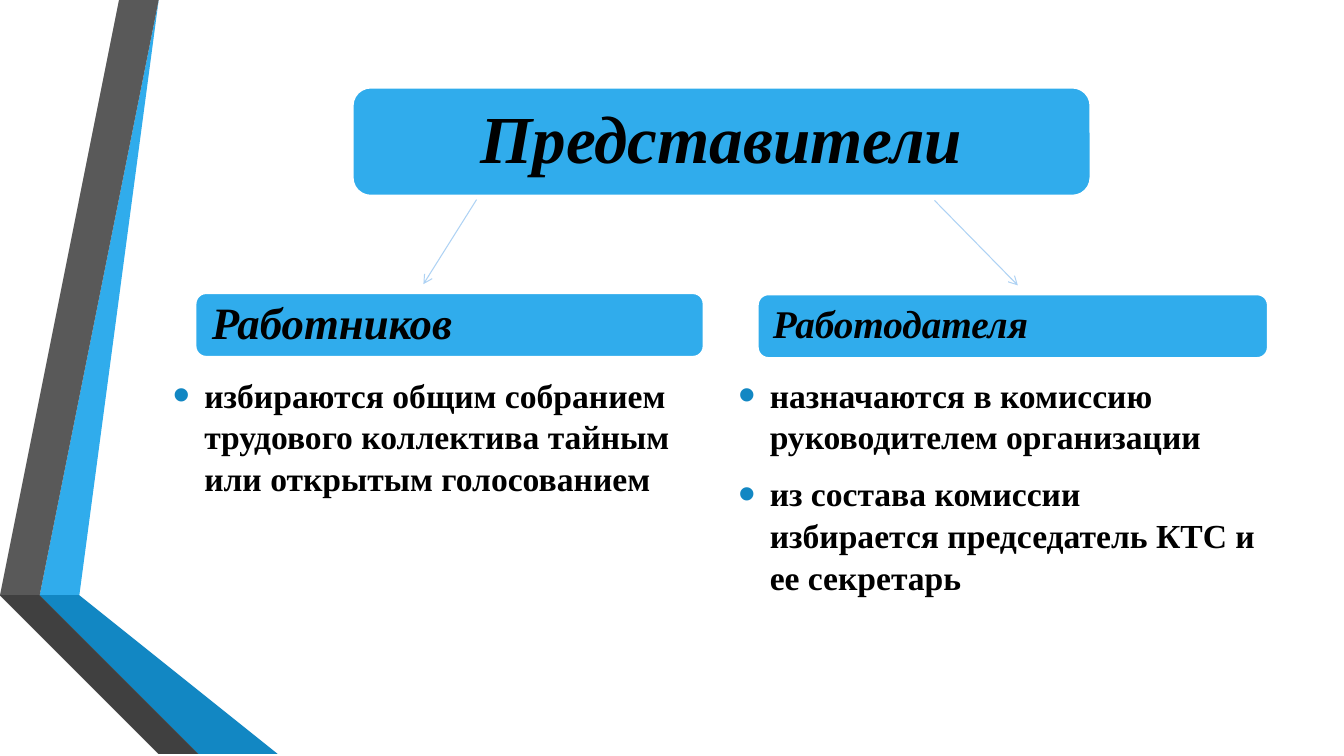
from dataclasses import dataclass

import pptx
import pptx.dml.color
import pptx.enum.shapes
import pptx.enum.text
import pptx.oxml
import pptx.oxml.ns
import pptx.util
from pptx.util import Cm


@dataclass(frozen=True)
class Theme:
    font: str = "Times New Roman"
    text: str = "000000"
    box: str = "30ACEC"
    border: str = "FFFFFF"
    bullet: str = "1287C3"
    arrow: str = "AED2F4"
    title_size: int = 48
    workers_size: int = 32
    employer_size: int = 28
    body_size: int = 24


THEME = Theme()

# Ribbon outlines in centimetres, back to front
RIBBONS = [
    ("30ACEC", [(1.27, 14.68), (1.96, 14.81), (4.39, 0), (3.68, 0)]),
    ("595959", [(3.53, 0), (2.82, 0), (0.41, 14.55), (1.12, 14.66)]),
    ("262626", [(0.41, 14.55), (3.68, 19.05), (3.84, 19.05)]),
    ("0C5A82", [(1.27, 14.7), (5.28, 19.05), (5.44, 19.05)]),
    ("1287C3", [(1.27, 14.7), (5.44, 19.05), (7.19, 19.05), (1.96, 14.81), (1.27, 14.68)]),
    ("404040", [(5.13, 19.05), (1.22, 14.81), (1.12, 14.66), (0.41, 14.55), (3.84, 19.05)]),
]


def rgb(value):
    return pptx.dml.color.RGBColor.from_string(value)


def add_xml(parent, xml):
    ns = pptx.oxml.ns.nsdecls("a")
    parent.append(pptx.oxml.parse_xml(xml.replace("/>", f" {ns}/>", 1)
                                      if xml.count("<") == 1
                                      else xml.replace(">", f" {ns}>", 1)))


def write(p, text, size, color=THEME.text, bold=True, italic=False,
          align=pptx.enum.text.PP_ALIGN.LEFT, spacing=1.0):
    p.alignment = align
    p.line_spacing = spacing
    r = p.add_run()
    r.text = text
    r.font.name = THEME.font
    r.font.size = pptx.util.Pt(size)
    r.font.bold = bold
    r.font.italic = italic
    r.font.color.rgb = rgb(color)


def add_ribbon(s, color, points):
    scale = Cm(1)
    builder = s.shapes.build_freeform(*points[0], scale=scale)
    builder.add_line_segments(points[1:], close=True)
    sp = builder.convert_to_shape()
    sp.shadow.inherit = False
    sp.fill.solid()
    sp.fill.fore_color.rgb = rgb(color)
    sp.line.fill.background()


def add_heading(s, text, left, top, width, height, inset, **text_format):
    sp = s.shapes.add_shape(pptx.enum.shapes.MSO_SHAPE.ROUNDED_RECTANGLE,
                            Cm(left), Cm(top), Cm(width), Cm(height))
    sp.shadow.inherit = False
    sp.fill.solid()
    sp.fill.fore_color.rgb = rgb(THEME.box)
    sp.line.color.rgb = rgb(THEME.border)
    sp.line.width = pptx.util.Pt(1.25)
    tf = sp.text_frame
    tf.word_wrap = True
    tf.vertical_anchor = pptx.enum.text.MSO_ANCHOR.MIDDLE
    tf.margin_left = tf.margin_right = Cm(inset)
    tf.margin_top = tf.margin_bottom = 0
    write(tf.paragraphs[0], text, italic=True, spacing=0.9, **text_format)


def add_bullets(s, items, left):
    tf = s.shapes.add_textbox(Cm(left), Cm(9.27), Cm(13.59), Cm(6.83)).text_frame
    tf.word_wrap = True
    for i, item in enumerate(items):
        p = tf.add_paragraph() if i else tf.paragraphs[0]
        write(p, item, THEME.body_size, spacing=1.04)
        p.space_before = pptx.util.Pt(4.8)
        p.space_after = pptx.util.Pt(6)
        pPr = p._p.get_or_add_pPr()
        pPr.set("marL", str(Cm(0.79)))
        pPr.set("indent", str(-Cm(0.79)))
        add_xml(pPr, f'<a:buClr><a:srgbClr val="{THEME.bullet}"/></a:buClr>')
        add_xml(pPr, '<a:buSzPct val="145000"/>')
        add_xml(pPr, '<a:buFont typeface="Arial"/>')
        add_xml(pPr, '<a:buChar char="•"/>')


def add_arrow(s, x1, y1, x2, y2):
    line = s.shapes.add_connector(pptx.enum.shapes.MSO_CONNECTOR.STRAIGHT,
                                  Cm(x1), Cm(y1), Cm(x2), Cm(y2))
    line.line.color.rgb = rgb(THEME.arrow)
    line.line.width = pptx.util.Pt(0.75)
    add_xml(line.line._get_or_add_ln(), '<a:tailEnd type="arrow"/>')
    add_xml(line._element.spPr, "<a:effectLst/>")


def main():
    prs = pptx.Presentation()
    prs.slide_width, prs.slide_height = Cm(33.87), Cm(19.05)
    s = prs.slides.add_slide(prs.slide_layouts[6])

    for color, points in RIBBONS:
        add_ribbon(s, color, points)

    add_heading(s, "Представители", 8.89, 2.21, 18.59, 2.72, 0.5,
                size=THEME.title_size, align=pptx.enum.text.PP_ALIGN.CENTER)
    add_heading(s, "Работников", 4.93, 7.39, 12.8, 1.6, 0.33, size=THEME.workers_size)
    add_heading(s, "Работодателя", 19.1, 7.42, 12.85, 1.6, 0.3, size=THEME.employer_size)

    add_bullets(s, ["избираются общим собранием трудового коллектива тайным "
                    "или открытым голосованием"], 4.11)
    add_bullets(s, ["назначаются в комиссию руководителем организации",
                    "из состава комиссии избирается председатель КТС и ее секретарь"], 18.36)

    add_arrow(s, 12.01, 5.03, 10.67, 7.16)
    add_arrow(s, 23.55, 5.05, 25.65, 7.19)
    prs.save("out.pptx")


if __name__ == "__main__":
    main()
